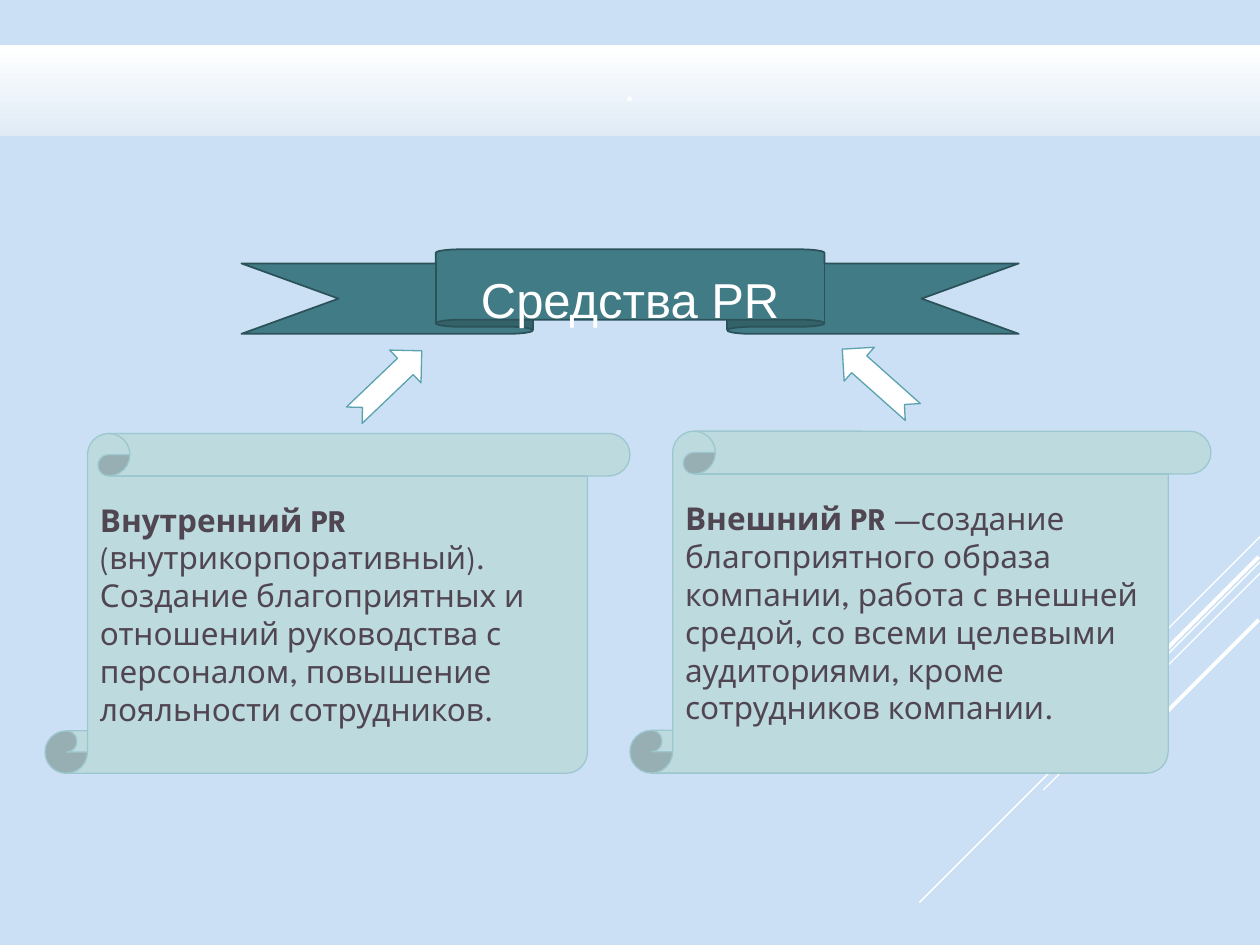
"""Build a slide that sets internal PR beside external PR under a ribbon heading."""
from typing import NamedTuple, Optional

from lxml.etree import SubElement
from pptx import Presentation
from pptx.dml.color import RGBColor
from pptx.enum.shapes import MSO_CONNECTOR, MSO_SHAPE
from pptx.enum.text import MSO_ANCHOR, PP_ALIGN
from pptx.oxml.ns import qn
from pptx.util import Pt

WHITE = RGBColor(0xFF, 0xFF, 0xFF)
SKY = RGBColor(0xCB, 0xE0, 0xF5)
MIST = RGBColor(0xE0, 0xEB, 0xF6)
TEAL = RGBColor(0x41, 0x7B, 0x85)
DARK_TEAL = RGBColor(0x2B, 0x52, 0x59)
ARROW_EDGE = RGBColor(0x5A, 0xA2, 0xAE)
PAPER = RGBColor(0xBD, 0xDA, 0xDF)
PAPER_EDGE = RGBColor(0x9C, 0xC7, 0xCE)
INK = RGBColor(0x50, 0x46, 0x52)
HEADING_FONT = "League Spartan"


class Frame(NamedTuple):
    left: float
    top: float
    width: float
    height: float


class Ray(NamedTuple):
    right: float
    top: float
    run: float
    weight: float


class Arrow(NamedTuple):
    frame: Frame
    rotation: float


class Scroll(NamedTuple):
    frame: Frame
    term: str
    meaning: str


RAYS = [
    Ray(720, 306.7, 59.8, 0.75),
    Ray(720, 321.1, 194.6, 0.75),
    Ray(720, 327.6, 123.8, 0.75),
    Ray(719.3, 318.2, 113, 2.25),
    Ray(719.3, 354.2, 82, 2.25),
]
ARROWS = [
    Arrow(Frame(195.1, 205.9, 53.3, 25.9), 316.3),
    Arrow(Frame(474.5, 204.5, 54, 25.9), 221.7),
]
SCROLLS = [
    Scroll(
        Frame(25.7, 247.7, 334.3, 194.2),
        "Внутренний PR ",
        "(внутрикорпоративный). Создание благоприятных и отношений руководства "
        "с персоналом, повышение лояльности сотрудников.",
    ),
    Scroll(
        Frame(360, 246.4, 332, 195.4),
        "Внешний PR ",
        "—создание благоприятного образа компании, работа с внешней средой, "
        "со всеми целевыми аудиториями, кроме сотрудников компании.",
    ),
]


def draw_ray(page, ray: Ray) -> None:
    line = page.shapes.add_connector(
        MSO_CONNECTOR.STRAIGHT,
        Pt(ray.right), Pt(ray.top), Pt(ray.right - ray.run), Pt(ray.top + ray.run),
    )
    line.line.color.rgb = WHITE
    line.line.width = Pt(ray.weight)
    SubElement(line._element.spPr, qn("a:effectLst"))


def draw_shape(page, kind: MSO_SHAPE, frame: Frame, fill: RGBColor,
               edge: Optional[RGBColor] = None, weight: float = 0.75):
    shape = page.shapes.add_shape(kind, *map(Pt, frame))
    shape.shadow.inherit = False
    shape.fill.solid()
    shape.fill.fore_color.rgb = fill
    if edge is None:
        shape.line.fill.background()
    else:
        shape.line.color.rgb = edge
        shape.line.width = Pt(weight)
    return shape


def start_text(shape, align: PP_ALIGN, spacing: float = 1.0):
    box = shape.text_frame
    box.word_wrap = True
    box.vertical_anchor = MSO_ANCHOR.MIDDLE
    para = box.paragraphs[0]
    para.alignment = align
    para.line_spacing = spacing
    return para


def add_span(para, text: str, *, size: float, color: RGBColor,
             font: str = HEADING_FONT, bold: bool = False) -> None:
    span = para.add_run()
    span.text = text
    span.font.name = font
    span.font.size = Pt(size)
    span.font.bold = bold
    span.font.color.rgb = color


def draw_title(page) -> None:
    band = draw_shape(page, MSO_SHAPE.RECTANGLE, Frame(0, 26, 720, 51.8), MIST)
    band.fill.gradient()
    band.fill.gradient_angle = 90
    for stop, color, position in zip(band.fill.gradient_stops, (MIST, WHITE), (0, 1)):
        stop.color.rgb = color
        stop.position = position
    add_span(start_text(band, PP_ALIGN.CENTER), ".", size=16, color=WHITE, bold=True)


def draw_ribbon(page) -> None:
    ribbon = draw_shape(page, MSO_SHAPE.UP_RIBBON, Frame(138, 142.5, 444.2, 48.3),
                        TEAL, DARK_TEAL, 1)
    para = start_text(ribbon, PP_ALIGN.CENTER, 1.5)
    add_span(para, "Средства PR", size=28, color=WHITE, font="Arial")


def draw_arrow(page, arrow: Arrow) -> None:
    shape = draw_shape(page, MSO_SHAPE.NOTCHED_RIGHT_ARROW, arrow.frame, WHITE, ARROW_EDGE)
    shape.rotation = arrow.rotation


def draw_scroll(page, scroll: Scroll) -> None:
    shape = draw_shape(page, MSO_SHAPE.VERTICAL_SCROLL, scroll.frame, PAPER, PAPER_EDGE)
    para = start_text(shape, PP_ALIGN.LEFT)
    add_span(para, scroll.term, size=18, color=INK, bold=True)
    add_span(para, scroll.meaning, size=18, color=INK)


def main() -> None:
    deck = Presentation()
    deck.slide_width, deck.slide_height = Pt(720), Pt(540)
    page = deck.slides.add_slide(deck.slide_layouts[6])
    page.background.fill.solid()
    page.background.fill.fore_color.rgb = SKY
    for ray in RAYS:
        draw_ray(page, ray)
    draw_title(page)
    draw_ribbon(page)
    for arrow in ARROWS:
        draw_arrow(page, arrow)
    for scroll in SCROLLS:
        draw_scroll(page, scroll)
    deck.save("out.pptx")


if __name__ == "__main__":
    main()
